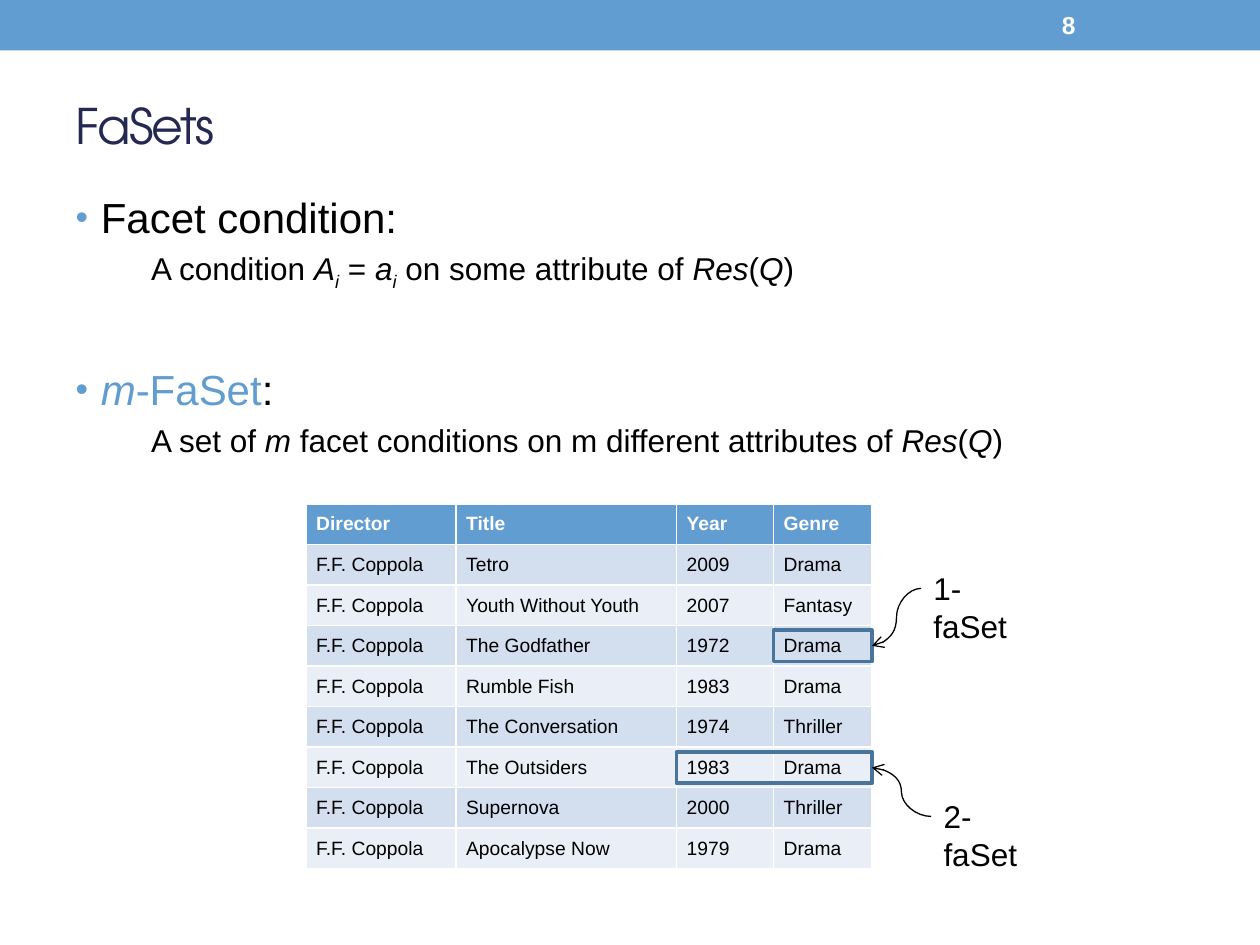
from dataclasses import dataclass

from lxml.etree import SubElement
from pptx import Presentation
from pptx.dml.color import RGBColor
from pptx.enum.shapes import MSO_CONNECTOR, MSO_SHAPE
from pptx.enum.text import MSO_ANCHOR, PP_ALIGN
from pptx.oxml.ns import qn
from pptx.util import Inches, Pt


@dataclass(frozen=True)
class Theme:
    font: str = "Arial"
    head: str = "TeX Gyre Adventor"
    blue: str = "629DD1"
    navy: str = "242852"
    frame: str = "49749B"
    bands: tuple = ("EAEFF7", "D3DFEE")
    black: str = "000000"
    white: str = "FFFFFF"
    title: int = 28
    topic: int = 24
    note: int = 18
    number: int = 14
    cell: int = 11


THEME = Theme()

# The slide is a grid of 100 columns by 75 rows
COLS, ROWS = 100, 75
LEFT, TOP = 24.3, 40          # table corner
WIDTHS = (11.9, 17.5, 7.7, 7.8)
STEP = 3.22                   # table row height

FILMS = [
    ("Tetro", "2009", "Drama"),
    ("Youth Without Youth", "2007", "Fantasy"),
    ("The Godfather", "1972", "Drama"),
    ("Rumble Fish", "1983", "Drama"),
    ("The Conversation", "1974", "Thriller"),
    ("The Outsiders", "1983", "Drama"),
    ("Supernova", "2000", "Thriller"),
    ("Apocalypse Now", "1979", "Drama"),
]
TABLE = [("Director", "Title", "Year", "Genre")]
TABLE += [("F.F. Coppola", *film) for film in FILMS]

# Each line: is it a topic, space before, runs of (text, style)
# Styles: i italic, s subscript, b blue
RES = [("Res", "i"), ("(", ""), ("Q", "i"), (")", "")]
LINES = [
    (True, 4, [("Facet condition:", "")]),
    (False, 4, [("A condition ", ""), ("A", "i"), ("i", "is"), (" = ", ""),
                ("a", "i"), ("i", "is"), (" on some attribute of ", ""), *RES]),
    (True, 41, [("m", "ib"), ("-FaSet", "b"), (":", "")]),
    (False, 4, [("A set of ", ""), ("m", "i"),
                (" facet conditions on m different attributes of ", ""), *RES]),
]


def unit(*cells):
    return [Inches(cell / 10) for cell in cells]


def color(code):
    return RGBColor.from_string(code)


def style(para, size, code, bold=False, face=THEME.font):
    font = para.font
    font.name, font.size, font.bold = face, Pt(size), bold
    font.color.rgb = color(code)


def place(shape, *cells):
    shape.left, shape.top, shape.width, shape.height = unit(*cells)


def add_title(slide, text):
    title = slide.shapes.title
    place(title, 5, 6, 90, 7.9)
    frame = title.text_frame
    frame.vertical_anchor = MSO_ANCHOR.MIDDLE
    para = frame.paragraphs[0]
    para.alignment = PP_ALIGN.LEFT
    run = para.add_run()
    run.text = text
    style(para, THEME.title, THEME.navy, face=THEME.head)
    run.font._element.set("spc", "-100")


def set_bullet(para, topic):
    props = para._p.get_or_add_pPr()
    props.set("marL", str(Inches(0.2 if topic else 0.8)))
    props.set("indent", str(Inches(-0.2)))
    if not topic:
        SubElement(props, qn("a:buNone"))
        return
    tint = SubElement(props, qn("a:buClr"))
    SubElement(tint, qn("a:srgbClr"), val=THEME.blue)
    SubElement(props, qn("a:buSzPct"), val="85000")
    SubElement(props, qn("a:buFont"), typeface=THEME.font)
    SubElement(props, qn("a:buChar"), char="•")


def add_body(slide, lines):
    body = slide.placeholders[1]
    place(body, 5, 14.7, 90, 25.7)
    frame = body.text_frame
    for index, (topic, gap, runs) in enumerate(lines):
        para = frame.add_paragraph() if index else frame.paragraphs[0]
        para.level = 0 if topic else 2
        para.space_before = Pt(gap)
        set_bullet(para, topic)
        style(para, THEME.topic if topic else THEME.note, THEME.black)
        for text, marks in runs:
            run = para.add_run()
            run.text = text
            if "i" in marks:
                run.font.italic = True
            if "s" in marks:
                run.font._element.set("baseline", "-25000")
            if "b" in marks:
                run.font.color.rgb = color(THEME.blue)


def add_label(slide, text, cells, size, code, bold=False):
    frame = slide.shapes.add_textbox(*unit(*cells)).text_frame
    frame.word_wrap = True
    para = frame.paragraphs[0]
    para.text = text
    style(para, size, code, bold)
    return frame


def add_rect(slide, cells, fill=None, line=None):
    rect = slide.shapes.add_shape(MSO_SHAPE.RECTANGLE, *unit(*cells))
    rect.shadow.inherit = False
    if fill:
        rect.fill.solid()
        rect.fill.fore_color.rgb = color(fill)
    else:
        rect.fill.background()
    if line:
        rect.line.color.rgb = color(line)
        rect.line.width = Pt(2.08)
    else:
        rect.line.fill.background()


def add_films(slide, rows):
    area = unit(LEFT, TOP, sum(WIDTHS), STEP * len(rows))
    table = slide.shapes.add_table(len(rows), len(WIDTHS), *area).table
    for col, width in zip(table.columns, unit(*WIDTHS)):
        col.width = width
    for y, row in enumerate(rows):
        table.rows[y].height = unit(STEP)[0]
        for x, text in enumerate(row):
            cell = table.cell(y, x)
            cell.margin_left, cell.margin_right = unit(0.8, 0.8)
            cell.margin_top, cell.margin_bottom = unit(0.4, 0.4)
            cell.vertical_anchor = MSO_ANCHOR.MIDDLE
            cell.fill.solid()
            fill = THEME.bands[y % 2] if y else THEME.blue
            cell.fill.fore_color.rgb = color(fill)
            para = cell.text_frame.paragraphs[0]
            para.text = text
            style(para, THEME.cell, THEME.black if y else THEME.white, not y)


def add_callout(slide, text, row, first, x, y):
    """Frame a table row from column first on, and point the label at it."""
    left = LEFT + sum(WIDTHS[:first])
    right = LEFT + sum(WIDTHS)
    top = TOP + row * STEP + 0.35
    add_rect(slide, (left, top, right - left, 2.5), line=THEME.frame)
    add_label(slide, text, (x, y, 9.7, 4), THEME.note, THEME.black)
    ends = unit(x, y + 2, right, top + 1.25)
    arrow = slide.shapes.add_connector(MSO_CONNECTOR.CURVE, *ends)
    arrow.line.color.rgb = color(THEME.black)
    arrow.line.width = Pt(0.75)
    SubElement(arrow.line._get_or_add_ln(), qn("a:tailEnd"), type="arrow")
    SubElement(arrow._element.spPr, qn("a:effectLst"))


def main():
    deck = Presentation()
    deck.slide_width, deck.slide_height = unit(COLS, ROWS)
    slide = deck.slides.add_slide(deck.slide_layouts[1])
    # Top band with page number
    add_rect(slide, (0, 0, COLS, 4), fill=THEME.blue)
    page = add_label(slide, "8", (83.3, 0.2, 11.7, 3.6),
                     THEME.number, THEME.white, True)
    page.vertical_anchor = MSO_ANCHOR.MIDDLE
    # Definitions
    add_title(slide, "FaSets")
    add_body(slide, LINES)
    # Example
    add_films(slide, TABLE)
    add_callout(slide, "1-faSet", 3, 3, 73.1, 44.7)
    add_callout(slide, "2-faSet", 6, 2, 73.9, 62.8)
    deck.save("out.pptx")


if __name__ == "__main__":
    main()
